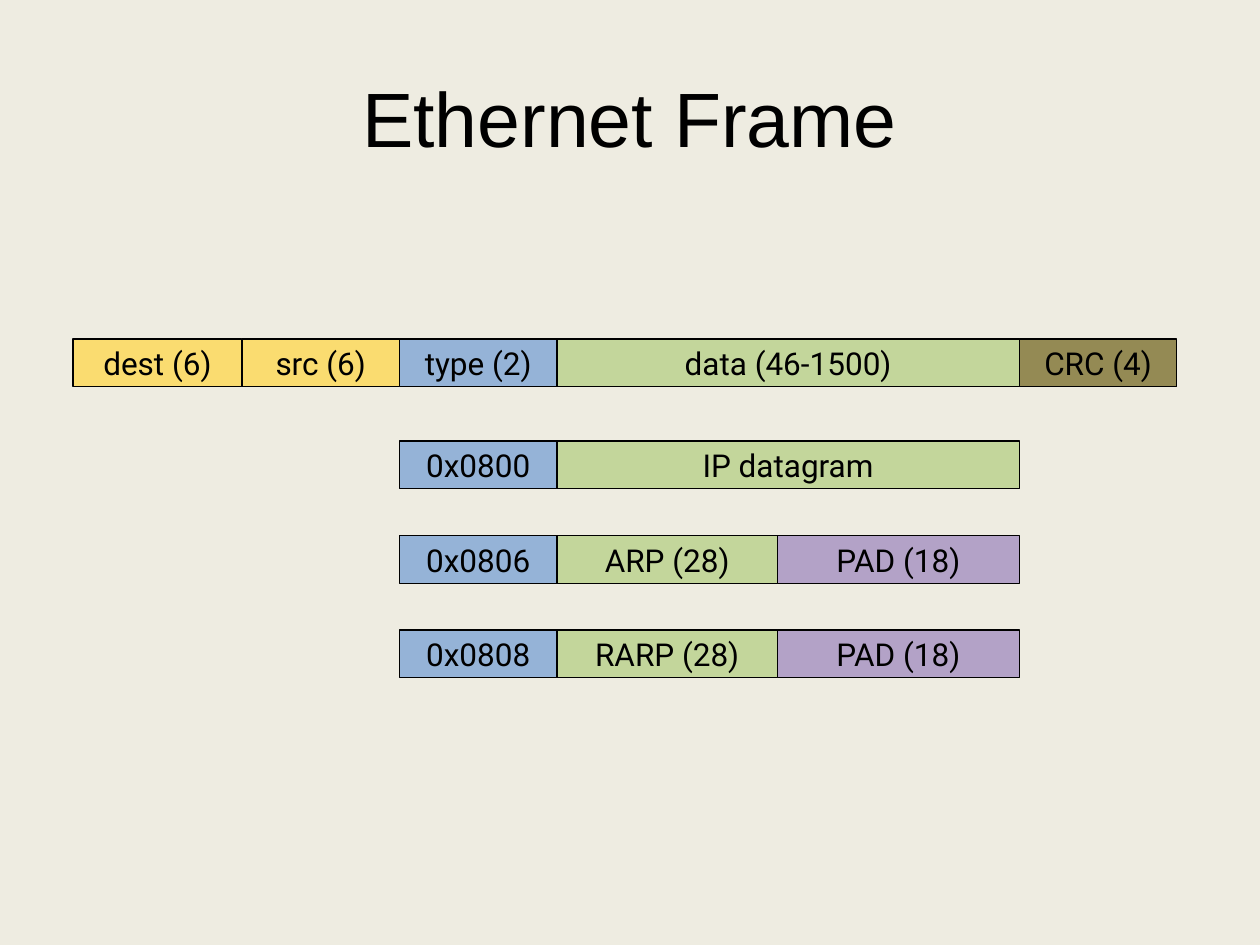
from typing import NamedTuple

from pptx import Presentation
from pptx.dml.color import RGBColor
from pptx.enum.shapes import MSO_SHAPE
from pptx.enum.text import MSO_ANCHOR, PP_ALIGN
from pptx.slide import Slide
from pptx.text.text import TextFrame
from pptx.util import Inches, Pt

BACKGROUND = RGBColor(0xEE, 0xEC, 0xE1)
BLACK = RGBColor(0x00, 0x00, 0x00)
ADDRESS = RGBColor(0xFA, 0xDC, 0x70)
TYPE = RGBColor(0x95, 0xB3, 0xD7)
DATA = RGBColor(0xC3, 0xD6, 0x9B)
CHECKSUM = RGBColor(0x94, 0x8A, 0x54)
PADDING = RGBColor(0xB3, 0xA2, 0xC7)

FIELD_HEIGHT = 0.38
FRAME_LEFT = 0.58
TYPE_LEFT = 3.17
TYPE_WIDTH = 1.25
DATA_WIDTH = 3.67
ARP_WIDTH = 1.75
PAD_WIDTH = DATA_WIDTH - ARP_WIDTH


class Field(NamedTuple):
    label: str
    width: float
    color: RGBColor


class FrameRow(NamedTuple):
    left: float
    top: float
    fields: list[Field]


PAD = Field("PAD (18)", PAD_WIDTH, PADDING)

ROWS = [
    FrameRow(FRAME_LEFT, 2.69, [
        Field("dest (6)", 1.34, ADDRESS),
        Field("src (6)", 1.25, ADDRESS),
        Field("type (2)", TYPE_WIDTH, TYPE),
        Field("data (46-1500)", DATA_WIDTH, DATA),
        Field("CRC (4)", 1.25, CHECKSUM),
    ]),
    FrameRow(TYPE_LEFT, 3.5, [
        Field("0x0800", TYPE_WIDTH, TYPE),
        Field("IP datagram", DATA_WIDTH, DATA),
    ]),
    FrameRow(TYPE_LEFT, 4.25, [
        Field("0x0806", TYPE_WIDTH, TYPE),
        Field("ARP (28)", ARP_WIDTH, DATA),
        PAD,
    ]),
    FrameRow(TYPE_LEFT, 5, [
        Field("0x0808", TYPE_WIDTH, TYPE),
        Field("RARP (28)", ARP_WIDTH, DATA),
        PAD,
    ]),
]


def write_centered(frame: TextFrame, text: str, font_name: str, size: int) -> None:
    frame.vertical_anchor = MSO_ANCHOR.MIDDLE
    paragraph = frame.paragraphs[0]
    paragraph.alignment = PP_ALIGN.CENTER
    run = paragraph.add_run()
    run.text = text
    run.font.name = font_name
    run.font.size = Pt(size)
    run.font.color.rgb = BLACK


def add_title(slide: Slide, text: str) -> None:
    title = slide.shapes.title
    title.left, title.top = Inches(0.5), Inches(0.3)
    title.width, title.height = Inches(9), Inches(1.25)
    write_centered(title.text_frame, text, "Arial", 44)


def add_field(slide: Slide, field: Field, left: float, top: float) -> None:
    shape = slide.shapes.add_shape(
        MSO_SHAPE.RECTANGLE,
        Inches(left), Inches(top), Inches(field.width), Inches(FIELD_HEIGHT),
    )
    shape.shadow.inherit = False
    shape.fill.solid()
    shape.fill.fore_color.rgb = field.color
    shape.line.color.rgb = BLACK
    shape.line.width = Pt(0.75)
    frame = shape.text_frame
    frame.word_wrap = False
    frame.margin_left = frame.margin_right = Inches(0.09)
    frame.margin_top = frame.margin_bottom = Inches(0.04)
    write_centered(frame, field.label, "Roboto", 18)


def add_row(slide: Slide, row: FrameRow) -> None:
    """Place the fields of a row side by side, without gaps."""
    left = row.left
    for field in row.fields:
        add_field(slide, field, left, row.top)
        left += field.width


def main() -> None:
    presentation = Presentation()
    presentation.slide_width = Inches(10)
    presentation.slide_height = Inches(7.5)
    title_only = presentation.slide_layouts[5]
    slide = presentation.slides.add_slide(title_only)
    slide.background.fill.solid()
    slide.background.fill.fore_color.rgb = BACKGROUND

    add_title(slide, "Ethernet Frame")
    for row in ROWS:
        add_row(slide, row)
    presentation.save("out.pptx")


if __name__ == "__main__":
    main()
